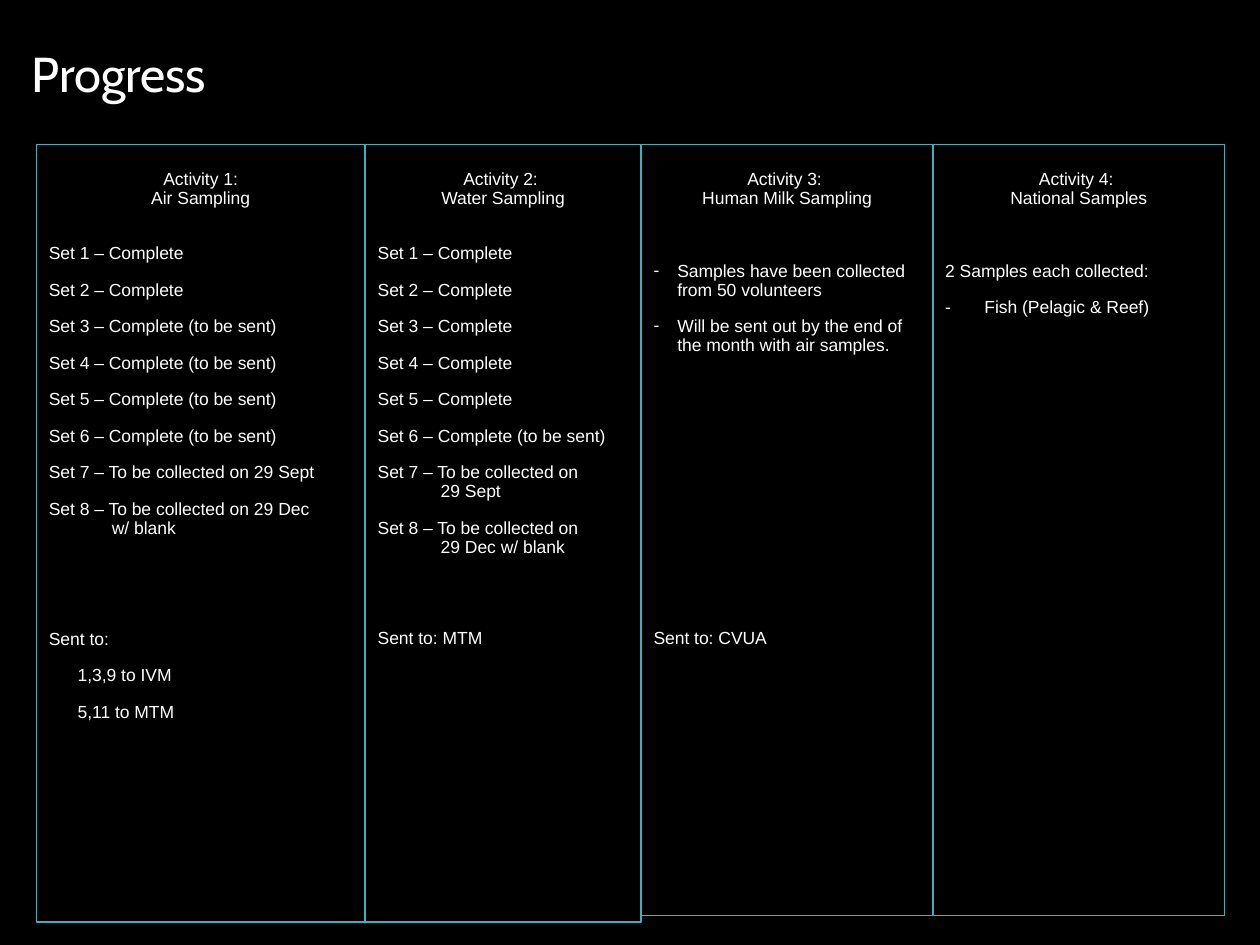
from lxml.etree import SubElement
from pptx import Presentation
from pptx.dml.color import RGBColor
from pptx.enum.text import MSO_ANCHOR, MSO_AUTO_SIZE, PP_ALIGN
from pptx.oxml.ns import qn
from pptx.util import Cm, Pt

BLACK = RGBColor(0x00, 0x00, 0x00)
WHITE = RGBColor(0xFF, 0xFF, 0xFF)
TEAL = RGBColor(0x41, 0xAE, 0xBD)

STEP = 10
HANGING = (1.27, -1.27, None)
PLAIN = (0, 0, None)
INDENTED = (0.58, 0, None)
DASH = (0.48, -0.48, "-")
WIDE_DASH = (0.79, -0.79, "-")

air_status = ["Complete"] * 2 + ["Complete (to be sent)"] * 4 + [
    "To be collected on 29 Sept", "To be collected on 29 Dec \vw/ blank"]
water_status = ["Complete"] * 5 + [
    "Complete (to be sent)", "To be collected on \v29 Sept",
    "To be collected on \v29 Dec w/ blank"]
air_sets, water_sets = [
    [(f"Set {number} – {status}", 21 if number == 1 else STEP, HANGING)
     for number, status in enumerate(statuses, 1)]
    for statuses in (air_status, water_status)]

activities = [
    ("Activity 1:\vAir Sampling", 0.73, 6.63, 15.67, air_sets + [
        ("Sent to:", 52.6, PLAIN),
        ("1,3,9 to IVM", STEP, INDENTED),
        ("5,11 to MTM", STEP, INDENTED)]),
    ("Activity 2: \vWater Sampling", 7.36, 5.56, 15.67, water_sets + [
        ("Sent to: MTM", 41.7, PLAIN)]),
    ("Activity 3: \vHuman Milk Sampling", 12.92, 5.89, 15.54, [
        ("Samples have been collected from 50 volunteers", 30.9, DASH),
        ("Will be sent out by the end of the month with air samples.", STEP, DASH),
        ("Sent to: CVUA", 156.6, PLAIN)]),
    ("Activity 4: \vNational Samples", 18.8, 5.89, 15.54, [
        ("2 Samples each collected:", 30.9, PLAIN),
        ("Fish (Pelagic & Reef)", STEP, WIDE_DASH)]),
]

prs = Presentation()
prs.slide_width, prs.slide_height = Cm(25.4), Cm(19.05)
slide = prs.slides.add_slide(prs.slide_layouts.get_by_name("Comparison"))
slide.background.fill.solid()
slide.background.fill.fore_color.rgb = BLACK

title, *columns = slide.placeholders
title.left, title.top, title.width, title.height = Cm(0.38), Cm(0.74), Cm(21.79), Cm(1.45)
title.text_frame.text = "Progress"
title.text_frame.auto_size = MSO_AUTO_SIZE.NONE
heading = title.text_frame.paragraphs[0]
heading.alignment = PP_ALIGN.LEFT
heading_font = heading.runs[0].font
heading_font.name, heading_font.size = "Cabin", Pt(28)
heading_font.color.rgb = WHITE

for column, (activity, left, width, height, entries) in zip(columns, activities):
    column.left, column.top = Cm(left), Cm(2.92)
    column.width, column.height = Cm(width), Cm(height)
    column.line.color.rgb = TEAL
    column.line.width = Pt(0.75)
    frame = column.text_frame
    frame_format = {"word_wrap": True, "auto_size": MSO_AUTO_SIZE.NONE,
                    "vertical_anchor": MSO_ANCHOR.TOP, "margin_top": Cm(0.51)}
    for name, value in frame_format.items():
        setattr(frame, name, value)

    for position, (text, before, (margin, indent, bullet)) in enumerate(
            [(activity, 0, PLAIN)] + entries):
        paragraph = frame.add_paragraph() if position else frame.paragraphs[0]
        paragraph.text = text
        properties = paragraph._p.get_or_add_pPr()
        properties.set("marL", str(Cm(margin)))
        properties.set("indent", str(Cm(indent)))
        if bullet:
            SubElement(properties, qn("a:buChar"), char=bullet)
        else:
            SubElement(properties, qn("a:buNone"))
        paragraph_format = {
            "alignment": PP_ALIGN.LEFT if position else PP_ALIGN.CENTER,
            "line_spacing": 0.9, "space_before": Pt(before), "space_after": Pt(0)}
        for name, value in paragraph_format.items():
            setattr(paragraph, name, value)
        for line_break in paragraph._p.findall(qn("a:br")):
            SubElement(line_break, qn("a:rPr"), sz="1000")
        for run in paragraph.runs:
            for name, value in {"name": "Arial", "size": Pt(10), "bold": False}.items():
                setattr(run.font, name, value)
            run.font.color.rgb = WHITE

prs.save("out.pptx")
